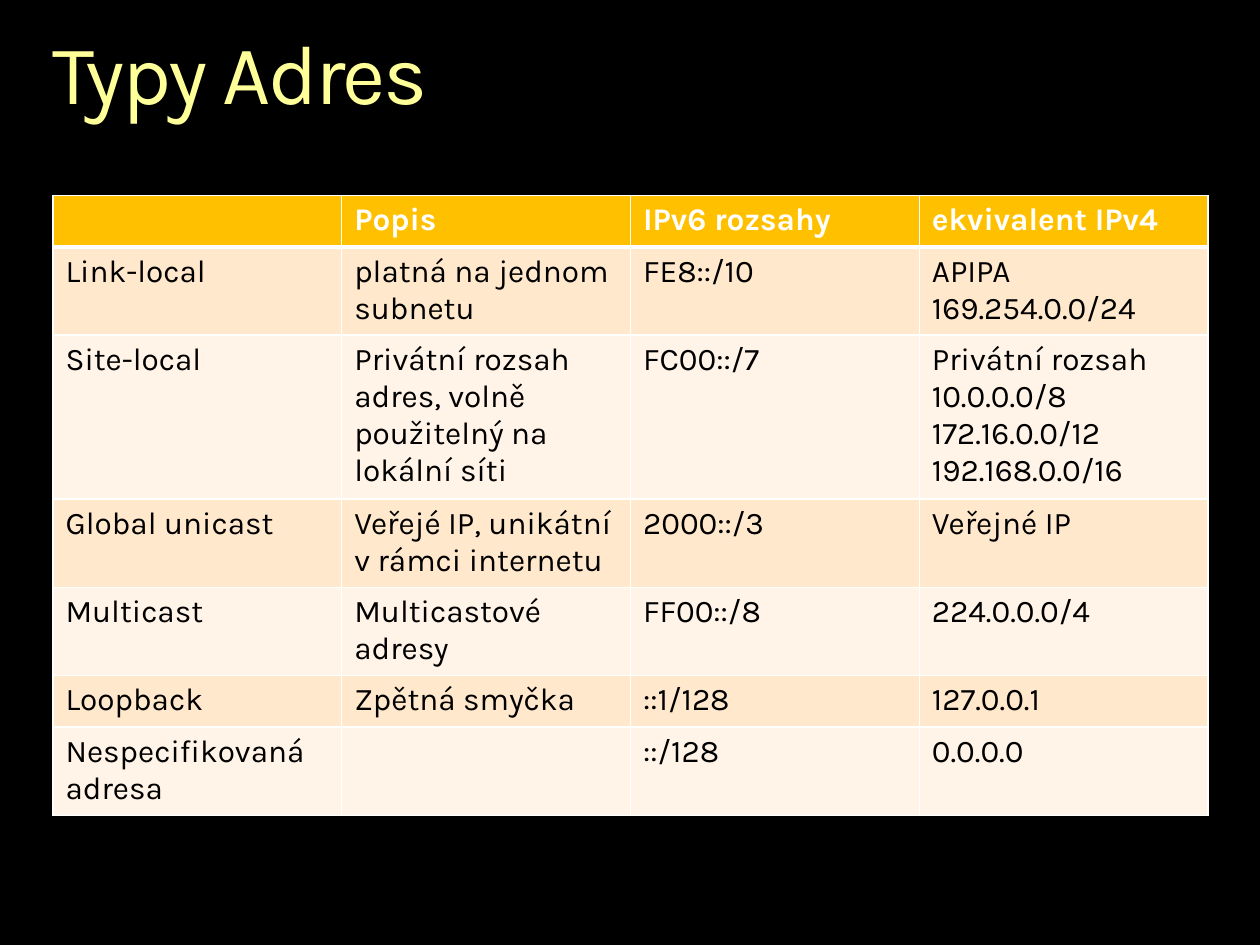
from lxml import etree
from pptx import Presentation
from pptx.dml.color import RGBColor
from pptx.enum.text import MSO_ANCHOR, MSO_AUTO_SIZE, PP_ALIGN
from pptx.oxml.ns import qn
from pptx.util import Inches, Pt

TOP = MSO_ANCHOR.TOP
GROW = MSO_AUTO_SIZE.SHAPE_TO_FIT_TEXT
LEFT = PP_ALIGN.LEFT

COLORS = {
    "background": "000000",
    "title": "FFFF99",
    "header": "FFC000",
    "band_dark": "FFE8CC",
    "band_light": "FFF4E7",
    "white": "FFFFFF",
    "black": "000000",
}

ROWS = [
    ["", "Popis", "IPv6 rozsahy", "ekvivalent IPv4"],
    ["Link-local", "platná na jednom subnetu", "FE8::/10", "APIPA\n169.254.0.0/24"],
    ["Site-local", "Privátní rozsah adres, volně použitelný na lokální síti", "FC00::/7",
     "Privátní rozsah\n10.0.0.0/8\n172.16.0.0/12\n192.168.0.0/16"],
    ["Global unicast", "Veřejé IP, unikátní v rámci internetu", "2000::/3", "Veřejné IP"],
    ["Multicast", "Multicastové adresy", "FF00::/8", "224.0.0.0/4"],
    ["Loopback", "Zpětná smyčka", "::1/128", "127.0.0.1"],
    ["Nespecifikovaná adresa", "", "::/128", "0.0.0.0"],
]


class Deck:
    """Holds the style and the current slide, and adds elements to it."""

    font = "Karla"
    left, width = Inches(0.42), Inches(9.17)

    def __init__(self, prs):
        self.s = prs.slides.add_slide(prs.slide_layouts[5])
        self.fill(self.s.background, "background")

    def fill(self, target, color):
        target.fill.solid()
        target.fill.fore_color.rgb = RGBColor.from_string(COLORS[color])

    def format(self, font, color, **values):
        for name, value in {"name": self.font, **values}.items():
            setattr(font, name, value)
        font.color.rgb = RGBColor.from_string(COLORS[color])

    def title(self, text):
        sp = self.s.shapes.title
        sp.left, sp.top, sp.width, sp.height = self.left, Inches(0.25), self.width, Inches(0.73)
        tf = sp.text_frame
        frame = {"text": text, "vertical_anchor": TOP, "auto_size": GROW, "word_wrap": True,
                 "margin_left": 0, "margin_top": 0, "margin_right": 0, "margin_bottom": 0}
        for name, value in frame.items():
            setattr(tf, name, value)
        p = tf.paragraphs[0]
        p.alignment, p.line_spacing = LEFT, 0.9
        r = p.runs[0]
        self.format(r.font, "title", size=Pt(48))
        r.font._element.set("spc", "-150")

    def borders(self, cell, **widths):
        tc_pr = cell._tc.get_or_add_tcPr()
        for side in "LRTB":
            ln = etree.SubElement(tc_pr, qn(f"a:ln{side}"), w=str(Pt(widths.get(side, 1))))
            solid = etree.SubElement(ln, qn("a:solidFill"))
            etree.SubElement(solid, qn("a:srgbClr"), val=COLORS["white"])

    def cell(self, cell, text, row):
        header = row == 0
        self.borders(cell, **{0: {"B": 3}, 1: {"T": 3}}.get(row, {}))
        self.fill(cell, "header" if header else "band_dark" if row % 2 else "band_light")
        cell.text = text
        for p in cell.text_frame.paragraphs:
            for r in p.runs:
                self.format(r.font, "white" if header else "black", size=Pt(18), bold=header)

    def table(self, rows, top, row_height):
        frame = self.s.shapes.add_table(len(rows), len(rows[0]), self.left, top,
                                        self.width, row_height * len(rows))
        for i, row in enumerate(rows):
            for j, text in enumerate(row):
                self.cell(frame.table.cell(i, j), text, i)


def main():
    prs = Presentation()
    prs.slide_width, prs.slide_height = Inches(10), Inches(7.5)
    deck = Deck(prs)
    deck.title("Typy Adres")
    deck.table(ROWS, Inches(1.55), Inches(0.41))
    prs.save("out.pptx")


if __name__ == "__main__":
    main()
